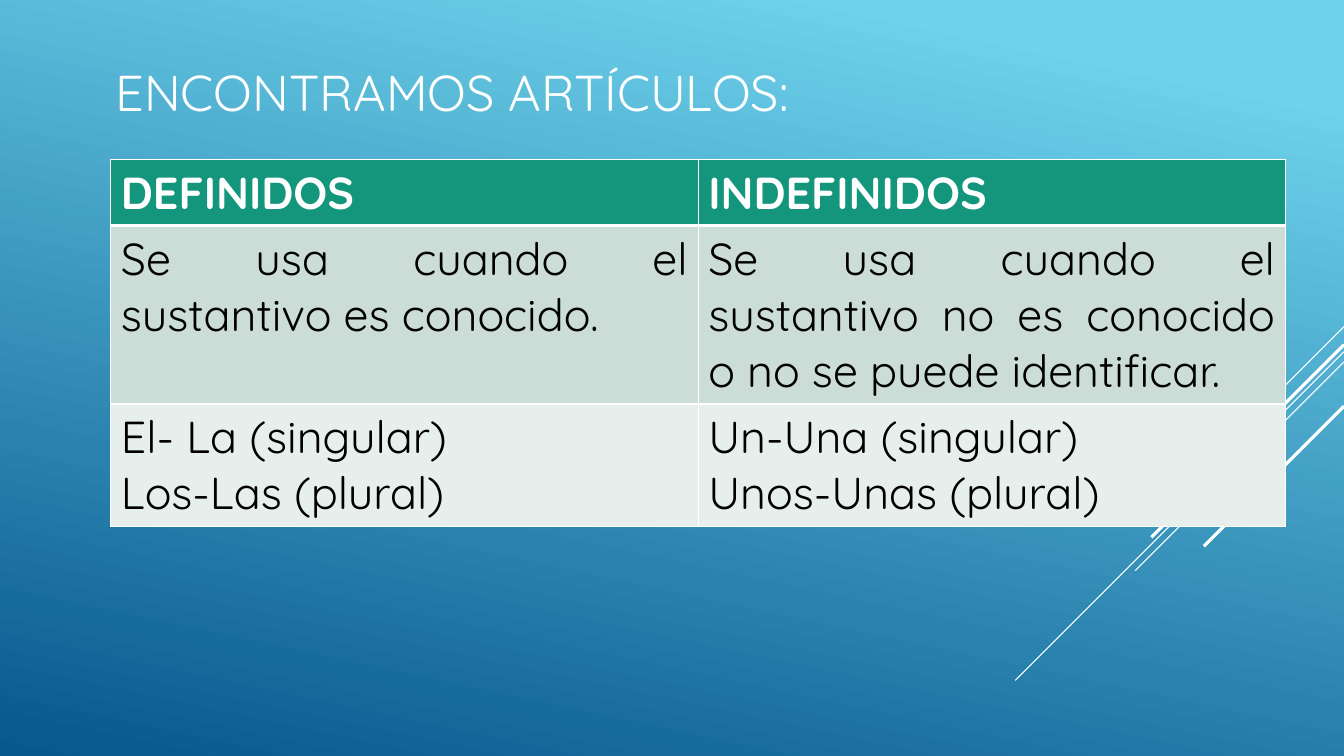
from lxml.etree import SubElement
from pptx import Presentation
from pptx.dml.color import RGBColor
from pptx.enum.shapes import MSO_CONNECTOR
from pptx.enum.text import MSO_ANCHOR, MSO_AUTO_SIZE, PP_ALIGN
from pptx.oxml import parse_xml
from pptx.oxml.ns import nsdecls, qn
from pptx.util import Inches, Pt

WHITE = RGBColor(0xFF, 0xFF, 0xFF)
BLACK = RGBColor(0x00, 0x00, 0x00)
SKY = RGBColor(0x6E, 0xD2, 0xEB)
NAVY = RGBColor(0x06, 0x58, 0x8E)
GREEN = RGBColor(0x14, 0x96, 0x7C)
SAGE = RGBColor(0xCC, 0xDD, 0xD7)
MIST = RGBColor(0xE7, 0xEF, 0xEC)

# Start height and drop of each 45° ray, in percent of the slide height, then width in points
RAYS = [
    (43.2, 13.33, 0.75),
    (46.53, 43.47, 0.75),
    (47.87, 27.6, 0.75),
    (45.6, 25.47, 2.25),
    (53.73, 18.53, 2.25),
]

# Row height in percent, fill, text colour, bold, alignment, paragraphs of each cell
ARTICLE_ROWS = [
    (8.73, GREEN, WHITE, True, PP_ALIGN.LEFT, [["DEFINIDOS"], ["INDEFINIDOS"]]),
    (23.6, SAGE, BLACK, False, PP_ALIGN.JUSTIFY, [
        ["Se usa cuando el sustantivo es conocido."],
        ["Se usa cuando el sustantivo no es conocido o no se puede identificar."],
    ]),
    (16.13, MIST, BLACK, False, PP_ALIGN.LEFT, [
        ["El- La (singular)", "Los-Las (plural)"],
        ["Un-Una (singular)", "Unos-Unas (plural)"],
    ]),
]


class SlideBuilder:
    """Draws on one slide; lengths are percentages of the slide's size."""

    font = "Quicksand"
    title_size = 36
    table_size = 32

    def __init__(self, deck):
        self.deck = deck
        self.slide = deck.slides.add_slide(deck.slide_layouts[5])

    def across(self, percent):
        return round(self.deck.slide_width * percent / 100)

    def down(self, percent):
        return round(self.deck.slide_height * percent / 100)

    def background(self, start, end, angle):
        fill = self.slide.background.fill
        fill.gradient()
        fill.gradient_angle = 360 - angle
        for stop, position, color in zip(fill.gradient_stops, (0.1, 1), (start, end)):
            stop.position = position
            stop.color.rgb = color

    def add_span(self, para, text, size, color, bold=False):
        span = para.add_run()
        span.text = text
        span.font.name = self.font
        span.font.size = Pt(size)
        span.font.bold = bold
        span.font.color.rgb = color

    def title(self, text, left, top, width, height):
        box = self.slide.shapes.title
        box.left, box.top = self.across(left), self.down(top)
        box.width, box.height = self.across(width), self.down(height)
        frame = box.text_frame
        frame.word_wrap = True
        frame.auto_size = MSO_AUTO_SIZE.NONE
        frame.vertical_anchor = MSO_ANCHOR.MIDDLE
        para = frame.paragraphs[0]
        para.alignment = PP_ALIGN.CENTER
        self.add_span(para, text, self.title_size, WHITE)

    def ray(self, start, drop, weight):
        """Draw a 45° line from the right edge down to the left."""
        right, top, run = self.across(100), self.down(start), self.down(drop)
        line = self.slide.shapes.add_connector(
            MSO_CONNECTOR.STRAIGHT, right, top, right - run, top + run)
        line.line.color.rgb = WHITE
        line.line.width = Pt(weight)
        SubElement(line._element.spPr, qn("a:effectLst"))

    def borders(self, cell, top, bottom):
        """Give a cell white borders; the side ones are 1 point wide."""
        properties = cell._tc.get_or_add_tcPr()
        sides = {"L": 1, "R": 1, "T": top, "B": bottom}
        for index, (side, weight) in enumerate(sides.items()):
            properties.insert(index, parse_xml(
                f'<a:ln{side} {nsdecls("a")} w="{Pt(weight)}"><a:solidFill>'
                f'<a:srgbClr val="{WHITE}"/></a:solidFill></a:ln{side}>'))

    def table(self, rows, left, top, width):
        height = sum(row[0] for row in rows)
        table = self.slide.shapes.add_table(
            len(rows), len(rows[0][-1]), self.across(left), self.down(top),
            self.across(width), self.down(height)).table
        for index, (height, fill, color, bold, alignment, texts) in enumerate(rows):
            table.rows[index].height = self.down(height)
            for cell, lines in zip(table.rows[index].cells, texts):
                cell.fill.solid()
                cell.fill.fore_color.rgb = fill
                self.borders(cell, 3 if index == 1 else 1, 3 if index == 0 else 1)
                frame = cell.text_frame
                for number, text in enumerate(lines):
                    para = frame.add_paragraph() if number else frame.paragraphs[0]
                    para.alignment = alignment
                    self.add_span(para, text, self.table_size, color, bold)


def main():
    deck = Presentation()
    deck.slide_width, deck.slide_height = Inches(13.33), Inches(7.5)
    builder = SlideBuilder(deck)
    builder.background(SKY, NAVY, 102)
    for ray in RAYS:
        builder.ray(*ray)
    builder.title("ENCONTRAMOS ARTÍCULOS:", 4.43, 3.2, 58.43, 17.87)
    builder.table(ARTICLE_ROWS, 8.25, 21.07, 87.4)
    deck.save("out.pptx")


if __name__ == "__main__":
    main()
